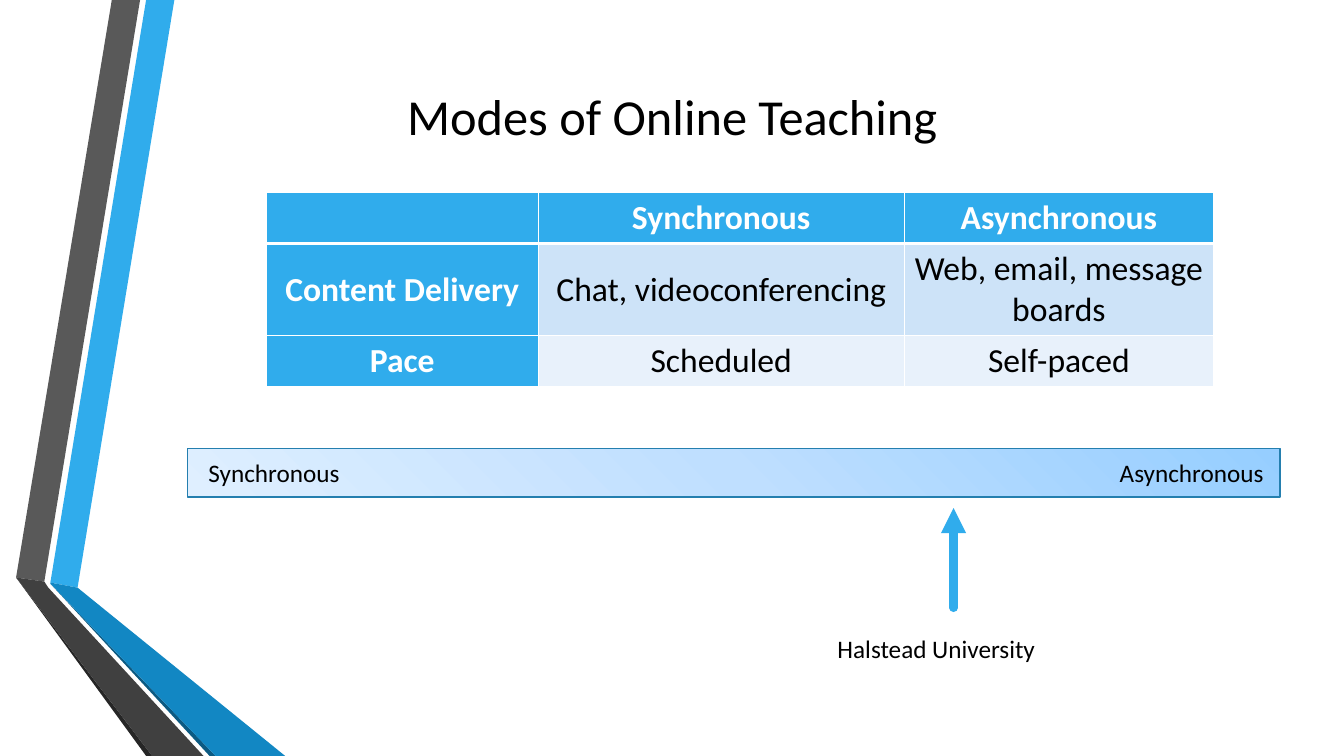
from typing import NamedTuple

from pptx import Presentation
from pptx.dml.color import RGBColor
from pptx.enum.shapes import MSO_CONNECTOR as Connector, MSO_SHAPE as Preset
from pptx.enum.text import MSO_ANCHOR as Anchor, MSO_AUTO_SIZE as AutoSize, PP_ALIGN as Align
from pptx.oxml import parse_xml
from pptx.oxml.ns import nsdecls
from pptx.util import Inches, Pt

# The slide is a grid of 0.1 inch columns and rows.
CELL = Inches(0.1)
SLIDE_COLUMNS, SLIDE_ROWS = 133.33, 75
FONT = "Calibri"
COLORS = {
    "black": "000000",
    "white": "FFFFFF",
    "blue": "30ACEC",
    "blue_fold": "1287C3",
    "blue_edge": "0C5A82",
    "gray": "595959",
    "gray_fold": "404040",
    "gray_edge": "262626",
    "band_dark": "CDE3F8",
    "band_light": "E8F1FB",
    "bar_line": "247FAF",
    "bar_deep": "96CEFF",
    "bar_mid": "BFDFFF",
    "bar_pale": "DFEFFF",
}


class Box(NamedTuple):
    left: float
    top: float
    width: float
    height: float


class Ribbon(NamedTuple):
    color: str
    corners: list[tuple[float, float]]


class Label(NamedTuple):
    text: str
    box: Box
    wrap: bool


class TableRow(NamedTuple):
    height: float
    band: str
    texts: tuple[str, str, str]


RIBBONS = [
    Ribbon("blue", [(5, 57.8), (7.7, 58.3), (17.3, 0), (14.5, 0)]),
    Ribbon("gray", [(13.9, 0), (11.1, 0), (1.6, 57.3), (4.4, 57.7)]),
    Ribbon("gray_edge", [(1.6, 57.3), (14.5, 75), (15.1, 75)]),
    Ribbon("blue_edge", [(5, 57.9), (20.8, 75), (21.4, 75)]),
    Ribbon("blue_fold", [(5, 57.9), (21.4, 75), (28.3, 75), (7.7, 58.3), (5, 57.8)]),
    Ribbon("gray_fold", [(20.2, 75), (4.8, 58.3), (4.4, 57.7), (1.6, 57.3), (15.1, 75)]),
]
TITLE_BOX = Box(6.4, 7.7, 120.6, 7.5)
TABLE_BOX = Box(26.4, 19.1, 94, 19)
TABLE_COLUMNS = (27, 36.3, 30.7)
TABLE_ROWS = [
    TableRow(5, "blue", ("", "Synchronous", "Asynchronous")),
    TableRow(9, "band_dark",
             ("Content Delivery", "Chat, videoconferencing", "Web, email, message boards")),
    TableRow(5, "band_light", ("Pace", "Scheduled", "Self-paced")),
]
SPECTRUM_BOX = Box(18.6, 44.5, 108.4, 4.8)
SPECTRUM_ENDS = [
    Label("Synchronous", Box(19.7, 44.9, 15.6, 4), False),
    Label("Asynchronous", Box(110.1, 44.9, 16.8, 4), False),
]
ARROW_COLUMN, ARROW_START, ARROW_END = 94.6, 60.3, 50.4
SCHOOL = Label("Halstead University", Box(82.1, 62.3, 25.1, 4), True)


def grid(cells: float) -> int:
    return round(cells * CELL)


def place(box: Box) -> list[int]:
    return [grid(length) for length in box]


def rgb(name: str) -> RGBColor:
    return RGBColor.from_string(COLORS[name])


def write(paragraph, text: str, size: float, color: str = "black", bold: bool = False) -> None:
    run = paragraph.add_run()
    run.text = text
    run.font.name = FONT
    run.font.size = Pt(size)
    run.font.bold = bold
    run.font.color.rgb = rgb(color)


def draw_ribbon(shapes, ribbon: Ribbon) -> None:
    start, *others = [(grid(x), grid(y)) for x, y in ribbon.corners]
    builder = shapes.build_freeform(*start)
    builder.add_line_segments(others)
    band = builder.convert_to_shape()
    band.shadow.inherit = False
    band.fill.solid()
    band.fill.fore_color.rgb = rgb(ribbon.color)
    band.line.fill.background()


def draw_label(shapes, label: Label) -> None:
    frame = shapes.add_textbox(*place(label.box)).text_frame
    frame.word_wrap = label.wrap
    frame.auto_size = AutoSize.SHAPE_TO_FIT_TEXT
    write(frame.paragraphs[0], label.text, 18)


def draw_title(title) -> None:
    title.left, title.top, title.width, title.height = place(TITLE_BOX)
    frame = title.text_frame
    frame.vertical_anchor = Anchor.MIDDLE
    frame.paragraphs[0].alignment = Align.CENTER
    write(frame.paragraphs[0], "Modes of Online Teaching", 36)


def add_borders(cell, bottom: float) -> None:
    widths = {"L": 1, "R": 1, "T": 1, "B": bottom}
    for position, (side, width) in enumerate(widths.items()):
        cell._tc.get_or_add_tcPr().insert(position, parse_xml(
            f'<a:ln{side} {nsdecls("a")} w="{Pt(width)}"><a:solidFill>'
            f'<a:srgbClr val="{COLORS["white"]}"/></a:solidFill></a:ln{side}>'))


def draw_modes_table(shapes) -> None:
    table = shapes.add_table(len(TABLE_ROWS), len(TABLE_COLUMNS), *place(TABLE_BOX)).table
    for column, width in zip(table.columns, TABLE_COLUMNS):
        column.width = grid(width)
    for r, row in enumerate(TABLE_ROWS):
        table.rows[r].height = grid(row.height)
        for c, text in enumerate(row.texts):
            cell = table.cell(r, c)
            heading = r == 0 or c == 0
            cell.fill.solid()
            cell.fill.fore_color.rgb = rgb("blue" if heading else row.band)
            add_borders(cell, bottom=3 if r == 0 else 1)
            cell.vertical_anchor = Anchor.MIDDLE
            paragraph = cell.text_frame.paragraphs[0]
            paragraph.alignment = Align.CENTER
            if text:
                write(paragraph, text, 24, "white" if heading else "black", heading)


def fill_from_top_right(shape, colors: tuple[str, ...]) -> None:
    """Fill with a circular gradient centred on the top right corner."""
    stops = "".join(
        f'<a:gs pos="{100000 * i // (len(colors) - 1)}"><a:srgbClr val="{COLORS[color]}"/></a:gs>'
        for i, color in enumerate(colors))
    shape.fill.gradient()
    properties = shape._element.spPr
    plain = properties.find(".//{*}gradFill")
    properties.replace(plain, parse_xml(
        f'<a:gradFill {nsdecls("a")} rotWithShape="1"><a:gsLst>{stops}</a:gsLst>'
        '<a:path path="circle"><a:fillToRect l="100000" b="100000"/></a:path></a:gradFill>'))


def draw_spectrum(shapes) -> None:
    spectrum = shapes.add_group_shape().shapes
    bar = spectrum.add_shape(Preset.RECTANGLE, *place(SPECTRUM_BOX))
    bar.shadow.inherit = False
    fill_from_top_right(bar, ("bar_deep", "bar_mid", "bar_pale"))
    bar.line.color.rgb = rgb("bar_line")
    bar.line.width = Pt(1.25)
    for end in SPECTRUM_ENDS:
        draw_label(spectrum, end)


def draw_arrow(shapes) -> None:
    arrow = shapes.add_connector(Connector.STRAIGHT, grid(ARROW_COLUMN), grid(ARROW_START),
                                 grid(ARROW_COLUMN), grid(ARROW_END))
    arrow.line.color.rgb = rgb("blue")
    arrow.line.width = Pt(6)
    outline = arrow.line._get_or_add_ln()
    outline.set("cap", "rnd")
    outline.append(parse_xml(f'<a:tailEnd {nsdecls("a")} type="triangle"/>'))
    arrow._element.spPr.append(parse_xml(f'<a:effectLst {nsdecls("a")}/>'))


def main() -> None:
    deck = Presentation()
    deck.slide_width, deck.slide_height = grid(SLIDE_COLUMNS), grid(SLIDE_ROWS)
    slide = deck.slides.add_slide(deck.slide_layouts.get_by_name("Title Only"))
    for ribbon in RIBBONS:
        draw_ribbon(slide.shapes, ribbon)
    draw_title(slide.shapes.title)
    draw_modes_table(slide.shapes)
    draw_spectrum(slide.shapes)
    draw_arrow(slide.shapes)
    draw_label(slide.shapes, SCHOOL)
    deck.save("out.pptx")


if __name__ == "__main__":
    main()
